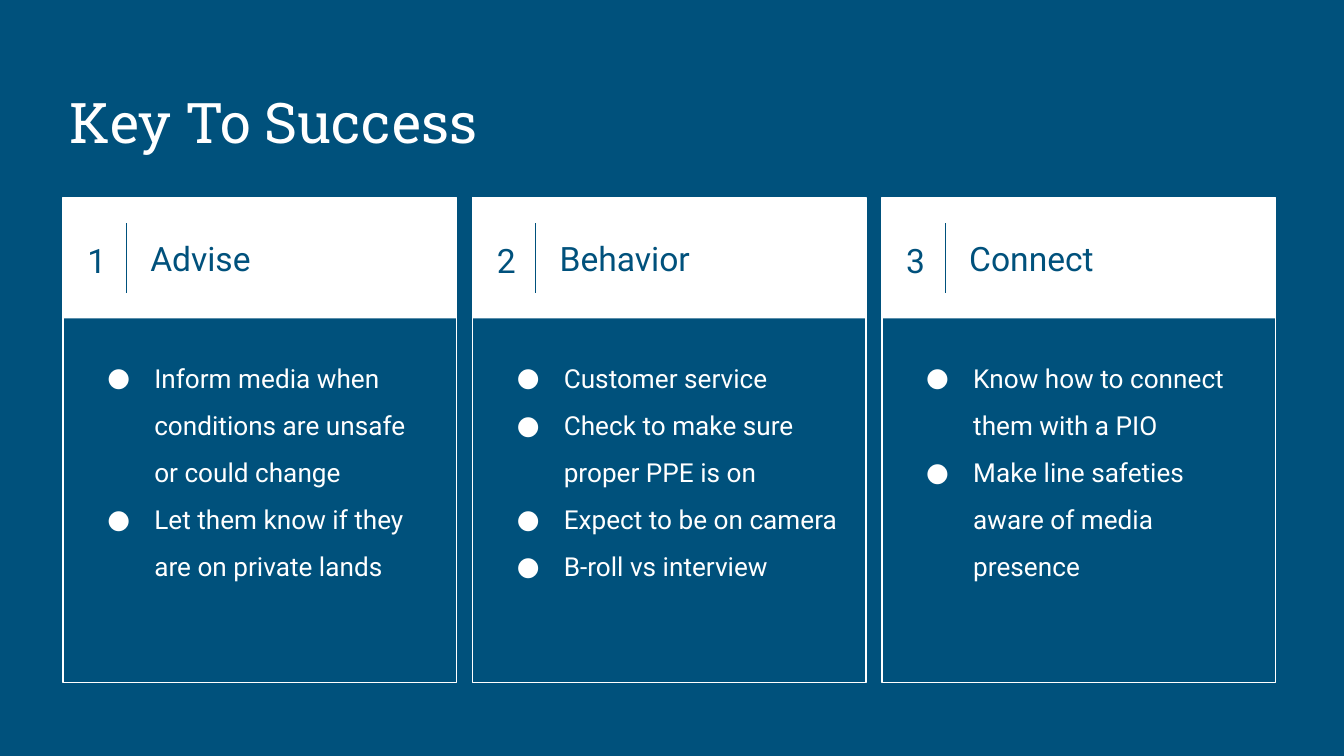
from dataclasses import dataclass

from lxml import etree
from pptx import Presentation
from pptx import util as u
from pptx.dml.color import RGBColor
from pptx.enum import shapes, text
from pptx.oxml.ns import qn

WIDTH = 10
HEIGHT = WIDTH * 9 / 16
HUES = {"blue": "00517C", "white": "FFFFFF"}
LEFT, RIGHT, TOP, GAP = 0.47, 9.49, 1.47, 0.12  # grid of cards
CARD_W = (RIGHT - LEFT - 2 * GAP) / 3
CARD_H, HEAD_H = 3.61, 0.9
INSET = 0.1


@dataclass
class Card:
    head: str
    points: list[str]


@dataclass
class Style:
    size: int
    hue: str
    face: str = "Roboto"
    space: float = 1.0
    align: text.PP_ALIGN = text.PP_ALIGN.LEFT
    anchor: text.MSO_ANCHOR = text.MSO_ANCHOR.MIDDLE
    bullet: bool = False


TITLE = Style(30, "white", "Roboto Slab", anchor=text.MSO_ANCHOR.BOTTOM)
NUMBER = Style(18, "blue", space=1.15, align=text.PP_ALIGN.CENTER)
HEAD = Style(18, "blue")
LIST = Style(14, "white", space=1.5, anchor=text.MSO_ANCHOR.TOP, bullet=True)

CARDS = [
    Card("Advise", ["Inform media when conditions are unsafe or could change",
                    "Let them know if they are on private lands"]),
    Card("Behavior", ["Customer service", "Check to make sure proper PPE is on",
                      "Expect to be on camera", "B-roll vs interview"]),
    Card("Connect", ["Know how to connect them with a PIO",
                     "Make line safeties aware of media presence"]),
]


def color(hue: str) -> RGBColor:
    return RGBColor.from_string(HUES[hue])


def add_bullet(para, style: Style) -> None:
    props = para._p.get_or_add_pPr()
    props.set("marL", str(u.Inches(0.5)))
    props.set("indent", str(u.Inches(-0.35)))
    tint = etree.SubElement(props, qn("a:buClr"))
    etree.SubElement(tint, qn("a:srgbClr"), val=HUES[style.hue])
    etree.SubElement(props, qn("a:buSzPts"), val=str(style.size * 100))
    etree.SubElement(props, qn("a:buFont"), typeface=style.face)
    etree.SubElement(props, qn("a:buChar"), char="●")


def write(frame, lines: list[str], style: Style) -> None:
    frame.word_wrap = True
    frame.auto_size = text.MSO_AUTO_SIZE.NONE
    frame.vertical_anchor = style.anchor
    frame.margin_left = frame.margin_right = u.Inches(INSET)
    frame.margin_top = frame.margin_bottom = u.Inches(INSET)
    frame.text = "\n".join(lines)
    for para in frame.paragraphs:
        para.alignment = style.align
        para.line_spacing = style.space
        if style.bullet:
            add_bullet(para, style)
        para.font.name = style.face
        para.font.size = u.Pt(style.size)
        para.font.color.rgb = color(style.hue)


def add_text(slide, box: tuple, lines: list[str], style: Style) -> None:
    write(slide.shapes.add_textbox(*map(u.Inches, box)).text_frame, lines, style)


def add_rect(slide, box: tuple, filled: bool) -> None:
    """Draw a white block, or only a white outline."""
    rect = slide.shapes.add_shape(shapes.MSO_SHAPE.RECTANGLE, *map(u.Inches, box))
    rect.shadow.inherit = False
    if filled:
        rect.fill.solid()
        rect.fill.fore_color.rgb = color("white")
        rect.line.fill.background()
    else:
        rect.fill.background()
        rect.line.color.rgb = color("white")
        rect.line.width = u.Pt(0.75)


def add_rule(slide, x: float, y: float, length: float) -> None:
    ends = map(u.Inches, (x, y, x, y + length))
    rule = slide.shapes.add_connector(shapes.MSO_CONNECTOR.STRAIGHT, *ends)
    rule.line.color.rgb = color("blue")
    rule.line.width = u.Pt(0.75)
    etree.SubElement(rule._element.spPr, qn("a:effectLst"))


def add_card(slide, col: int, card: Card) -> None:
    x = LEFT + col * (CARD_W + GAP)
    add_rect(slide, (x, TOP, CARD_W, CARD_H), False)
    add_rect(slide, (x, TOP, CARD_W, HEAD_H), True)
    add_text(slide, (x + 0.06, TOP - 0.01, 0.38, HEAD_H), [str(col + 1)], NUMBER)
    add_rule(slide, x + 0.47, TOP + 0.19, 0.52)
    add_text(slide, (x + 0.55, TOP, 2.3, HEAD_H), [card.head], HEAD)
    add_text(slide, (x + 0.08, 2.48, 2.77, 2.6), card.points, LIST)


def main() -> None:
    deck = Presentation()
    deck.slide_width, deck.slide_height = u.Inches(WIDTH), u.Inches(HEIGHT)
    slide = deck.slides.add_slide(deck.slide_layouts[5])
    slide.background.fill.solid()
    slide.background.fill.fore_color.rgb = color("blue")

    title = slide.shapes.title
    title.left, title.top = u.Inches(0.42), u.Inches(0.5)
    title.width, title.height = u.Inches(9.15), u.Inches(0.75)
    write(title.text_frame, ["Key To Success"], TITLE)

    for col, card in enumerate(CARDS):
        add_card(slide, col, card)
    deck.save("out.pptx")


if __name__ == "__main__":
    main()
